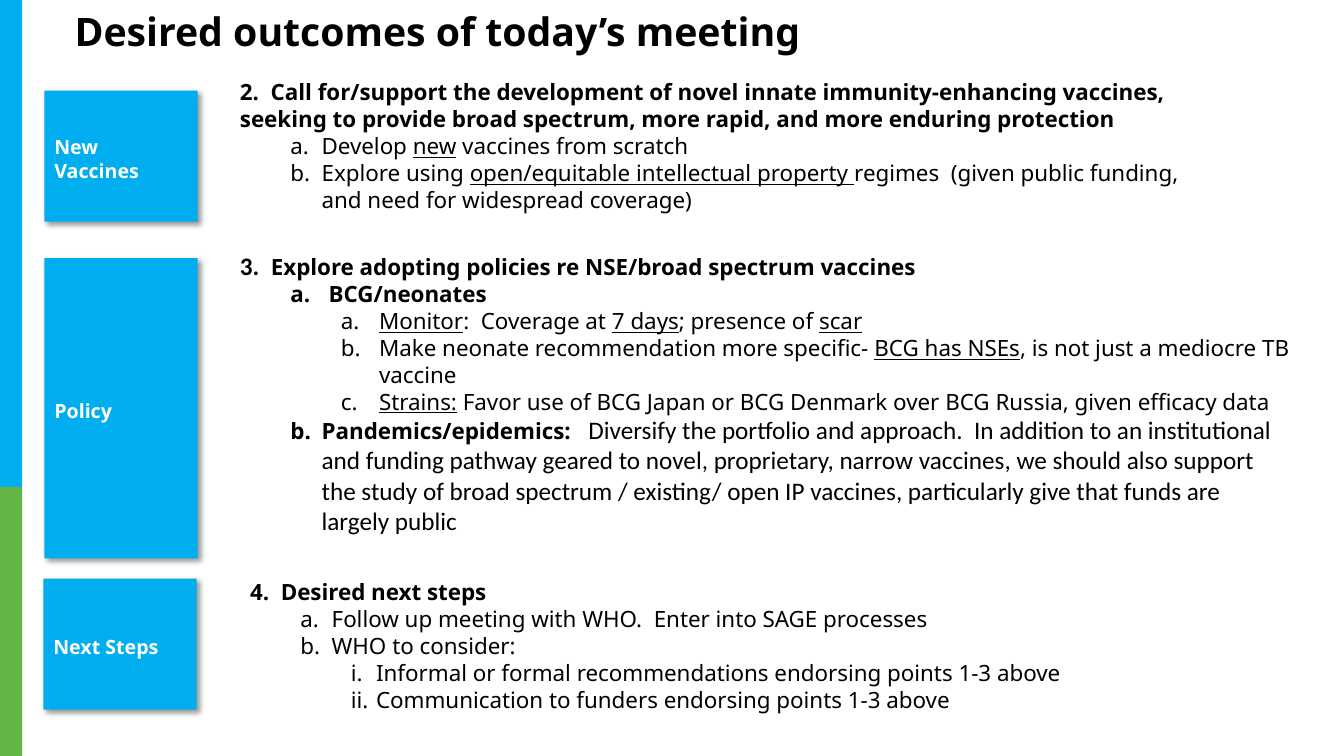
"""Build the slide on the desired outcomes of the meeting."""
from dataclasses import dataclass

from lxml import etree
from pptx import Presentation
from pptx.dml.color import RGBColor
from pptx.enum.shapes import MSO_SHAPE
from pptx.enum.text import MSO_ANCHOR, MSO_AUTO_SIZE, PP_ALIGN
from pptx.oxml.ns import qn
from pptx.util import Inches, Pt

RECTANGLE = MSO_SHAPE.RECTANGLE
LEFT = PP_ALIGN.LEFT
TOP, MIDDLE = MSO_ANCHOR.TOP, MSO_ANCHOR.MIDDLE
GROW = MSO_AUTO_SIZE.SHAPE_TO_FIT_TEXT
COMPARISON_LAYOUT = 4
BLUE, GREEN, BLACK, WHITE = "00AEF0", "64B545", "000000", "FFFFFF"
SANS, CALIBRI = "Noto Sans", "Calibri"
LETTERS, ROMAN = "alphaLcPeriod", "romanLcPeriod"


@dataclass(frozen=True)
class Box:
    """A position and size in inches."""
    left: float
    top: float
    width: float
    height: float


@dataclass(frozen=True)
class Run:
    """A stretch of text in one format."""
    text: str
    bold: bool = False
    underline: bool = False
    size: float = 16
    font: str = SANS


@dataclass(frozen=True)
class Item:
    """A list paragraph with its level, indents and numbering."""
    runs: list[Run]
    level: int = 0
    margin: float = 0
    hanging: float = 0
    numbering: str = ""


@dataclass(frozen=True)
class Section:
    """A labelled block of outcomes."""
    label: str
    label_box: Box
    list_box: Box
    items: list[Item]


def plain(text: str) -> Run:
    """Return a regular run."""
    return Run(text)


def bold(text: str) -> Run:
    """Return a bold run."""
    return Run(text, bold=True)


def underlined(text: str) -> Run:
    """Return an underlined run."""
    return Run(text, underline=True)


def step(*runs: Run) -> Item:
    """Return a lettered item of the first level."""
    return Item(list(runs), 1, 0.81, 0.31, LETTERS)


def detail(*runs: Run) -> Item:
    """Return a lettered item of the second level."""
    return Item(list(runs), 2, 1.38, 0.38, LETTERS)


def roman(text: str) -> Item:
    """Return a roman-numbered item of the second level."""
    return Item([plain(text)], 2, 1.25, 0.25, ROMAN)


SECTIONS = [
    Section("New Vaccines", Box(0.44, 0.9, 1.52, 1.3), Box(2.28, 0.73, 9.85, 1.45), [
        Item([bold("2.  Call for/support the development of novel innate immunity-enhancing "
                   "vaccines, seeking to provide broad spectrum, more rapid, and more "
                   "enduring protection")]),
        step(plain("Develop "), underlined("new"), plain(" vaccines from scratch")),
        step(plain("Explore using "), underlined("open/equitable intellectual property "),
             plain("regimes  (given public funding, and need for widespread coverage)")),
    ]),
    Section("Policy", Box(0.44, 2.56, 1.52, 2.98), Box(2.28, 2.43, 10.61, 3.23), [
        Item([Run("3.  ", bold=True, size=18, font=CALIBRI),
              bold("Explore adopting policies re NSE/broad spectrum vaccines")]),
        Item([bold("BCG/neonates")], 1, 0.88, 0.38, LETTERS),
        detail(underlined("Monitor"), plain(":  Coverage at "), underlined("7 days"),
               plain("; presence of "), underlined("scar")),
        detail(plain("Make neonate recommendation more specific- "),
               underlined("BCG has NSEs"), plain(", is not just a mediocre TB vaccine")),
        detail(underlined("Strains:"),
               plain(" Favor use of BCG Japan or BCG Denmark over BCG Russia, "
                     "given efficacy data")),
        step(bold("Pandemics/epidemics:  "), Run(" ", bold=True, size=18, font=CALIBRI),
             Run("Diversify the portfolio and approach.  In addition to an institutional "
                 "and funding pathway geared to novel, proprietary, narrow vaccines, we "
                 "should also support the study of broad spectrum / existing/ open IP "
                 "vaccines, particularly give that funds are largely public",
                 size=18, font=CALIBRI)),
    ]),
    Section("Next Steps", Box(0.43, 5.74, 1.52, 1.3), Box(2.38, 5.69, 10.83, 1.45), [
        Item([bold("4.  Desired next steps")]),
        step(plain("Follow up meeting with WHO.  Enter into SAGE processes")),
        step(plain("WHO to consider:")),
        roman("Informal or formal recommendations endorsing points 1-3 above"),
        roman("Communication to funders endorsing points 1-3 above"),
    ]),
]


def rgb(color: str) -> RGBColor:
    """Turn a hex string into a colour."""
    return RGBColor.from_string(color)


def add_text(paragraph, text: str, *, size: float = 16, font: str = SANS,
             color: str = BLACK, bold: bool = False, underline: bool = False) -> None:
    """Append formatted text to a paragraph."""
    run = paragraph.add_run()
    run.text = text
    run.font.size, run.font.name = Pt(size), font
    run.font.bold, run.font.underline = bold, underline
    run.font.color.rgb = rgb(color)


def place(shape, box: Box) -> None:
    """Move and size a placeholder."""
    shape.left, shape.top = Inches(box.left), Inches(box.top)
    shape.width, shape.height = Inches(box.width), Inches(box.height)


def prepare_frame(placeholder, box: Box):
    """Place a placeholder and return its top-anchored text frame."""
    place(placeholder, box)
    frame = placeholder.text_frame
    frame.word_wrap, frame.auto_size, frame.vertical_anchor = True, GROW, TOP
    return frame


def add_rectangle(slide, box: Box, color: str):
    """Draw a plain filled rectangle."""
    shape = slide.shapes.add_shape(RECTANGLE, Inches(box.left), Inches(box.top),
                                   Inches(box.width), Inches(box.height))
    shape.shadow.inherit = False
    shape.fill.solid()
    shape.fill.fore_color.rgb = rgb(color)
    shape.line.fill.background()
    return shape


def add_label(slide, section: Section) -> None:
    """Draw the shadowed label of a section."""
    label = add_rectangle(slide, section.label_box, BLUE)
    effects = label._element.spPr.find(qn("a:effectLst"))
    shadow = etree.SubElement(effects, qn("a:outerShdw"), blurRad=str(Pt(4)),
                              dist=str(Pt(3)), dir="2700000", algn="tl", rotWithShape="0")
    shade = etree.SubElement(shadow, qn("a:srgbClr"), val=BLACK)
    etree.SubElement(shade, qn("a:alpha"), val="40000")
    frame = label.text_frame
    frame.word_wrap, frame.vertical_anchor = True, MIDDLE
    frame.margin_top = Inches(0.1)
    frame.paragraphs[0].alignment = LEFT
    add_text(frame.paragraphs[0], section.label, size=14, color=WHITE, bold=True)


def fill_list(placeholder, section: Section) -> None:
    """Write the outcomes of a section into a body placeholder."""
    frame = prepare_frame(placeholder, section.list_box)
    for index, item in enumerate(section.items):
        paragraph = frame.add_paragraph() if index else frame.paragraphs[0]
        paragraph.level = item.level
        paragraph.space_before, paragraph.line_spacing = Pt(0), 1.0
        properties = paragraph._p.get_or_add_pPr()
        properties.set("marL", str(Inches(item.margin)))
        properties.set("indent", str(-Inches(item.hanging)))
        if item.numbering:
            etree.SubElement(properties, qn("a:buFont"), typeface="+mj-lt")
            etree.SubElement(properties, qn("a:buAutoNum"), type=item.numbering)
        else:
            etree.SubElement(properties, qn("a:buNone"))
        for run in item.runs:
            add_text(paragraph, run.text, size=run.size, font=run.font,
                     bold=run.bold, underline=run.underline)


def main() -> None:
    """Build and save the presentation."""
    deck = Presentation()
    deck.slide_width, deck.slide_height = Inches(13.33), Inches(7.5)
    slide = deck.slides.add_slide(deck.slide_layouts[COMPARISON_LAYOUT])
    title, *bodies = slide.placeholders
    heading = prepare_frame(title, Box(0.64, 0.02, 11.4, 0.57)).paragraphs[0]
    heading.alignment = LEFT
    add_text(heading, "Desired outcomes of today’s meeting", size=28, bold=True)
    add_rectangle(slide, Box(0, 0, 0.22, 4.84), BLUE)
    add_rectangle(slide, Box(0, 4.83, 0.22, 2.67), GREEN)
    for section, body in zip(SECTIONS, bodies):
        fill_list(body, section)
        add_label(slide, section)
    spare = bodies[-1]._element
    spare.getparent().remove(spare)
    deck.save("out.pptx")


if __name__ == "__main__":
    main()
